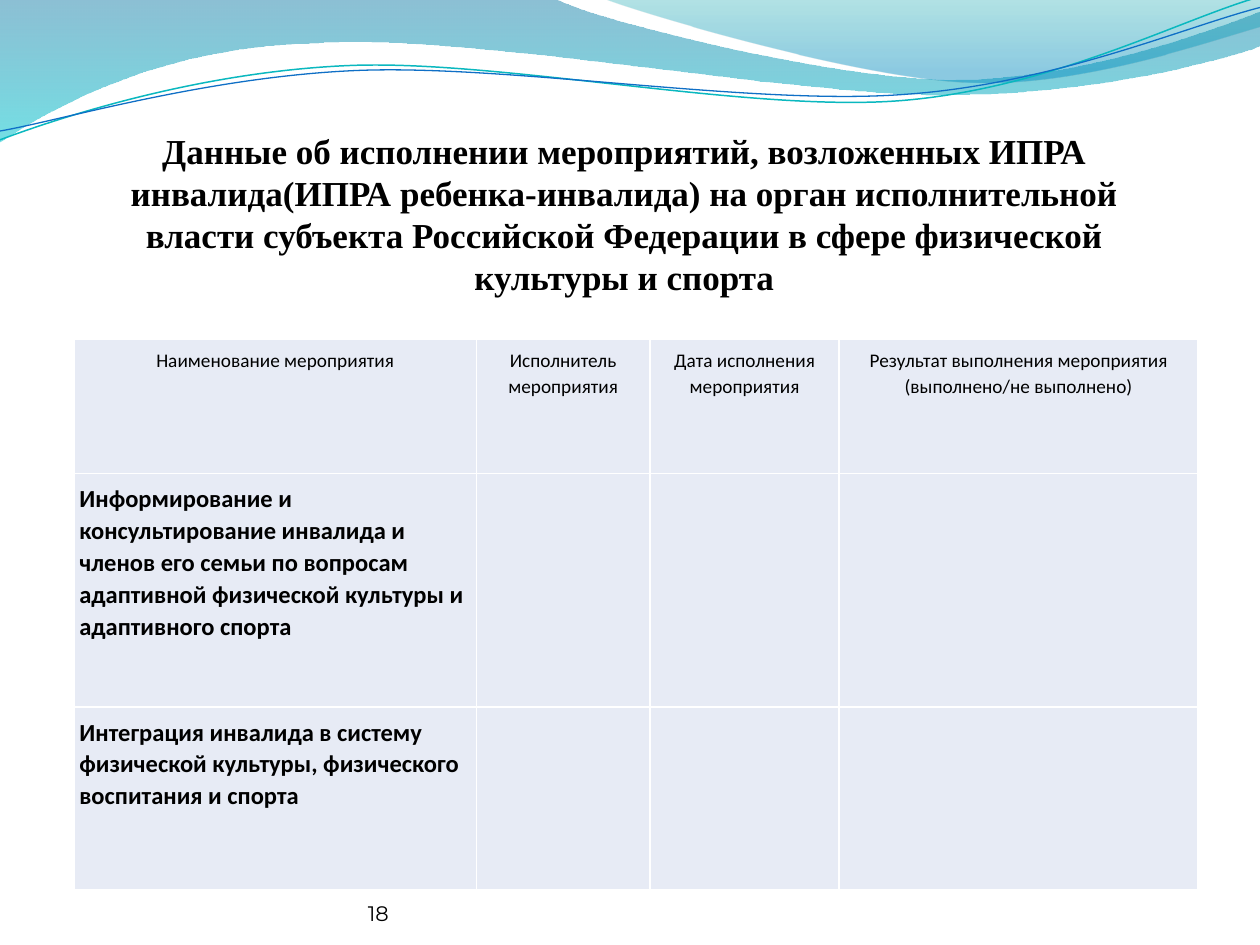
from math import cos, radians, sin

from lxml.etree import SubElement
from pptx import Presentation
from pptx.dml.color import RGBColor
from pptx.enum.text import MSO_ANCHOR as Anchor, MSO_AUTO_SIZE as AutoSize, PP_ALIGN as Align
from pptx.oxml.ns import qn
from pptx.util import Inches, Pt

COLORS = {
    "text": "000000", "cell": "E7EBF5", "border": "FFFFFF",
    "deep": "0074A1", "cyan": "00C6CF", "teal": "00A1A9", "sky": "008BBF",
    "upper line": "0AB8BF", "lower line": "0F6FC6",
}


def write(frame, text, font="Calibri", size=11, bold=False, align=Align.LEFT,
          spacing=1.0, anchor=Anchor.TOP):
    frame.word_wrap = True
    frame.vertical_anchor = anchor
    paragraph = frame.paragraphs[0]
    paragraph.alignment = align
    paragraph.line_spacing = spacing
    run = paragraph.add_run()
    run.text = text
    run.font.name = font
    run.font.size = Pt(size)
    run.font.bold = bold
    run.font.color.rgb = RGBColor.from_string(COLORS["text"])


def draw_curve(start, segments, close=False, tilt=0, center=(0, 0)):
    points = [start]
    for segment in segments:
        points += zip(segment[::2], segment[1::2])
    c, s = cos(radians(tilt)), sin(radians(tilt))
    offsets = [(x - center[0], y - center[1]) for x, y in points]
    placed = [(Inches(center[0] + x * c + y * s), Inches(center[1] - x * s + y * c))
              for x, y in offsets]
    builder = slide.shapes.build_freeform(*placed[0])
    builder.add_line_segments(placed[1:], close=close)
    curve = builder.convert_to_shape()
    curve.rotation = tilt
    curve.shadow.inherit = False
    corners = iter(list(curve._element.spPr.iter(qn("a:lnTo"))))
    for segment in segments:
        corner = next(corners)
        if len(segment) == 6:
            corner.addprevious(bezier := corner.makeelement(qn("a:cubicBezTo")))
            for handle in (corner, next(corners), next(corners)):
                bezier.append(handle[0])
                handle.getparent().remove(handle)
    return curve


prs = Presentation()
prs.slide_width, prs.slide_height = Inches(10), Inches(7.5)
slide = prs.slides.add_slide(prs.slide_layouts[5])

waves = [
    ((0, 0),
     [(4.4, -0.01), (4.76, 0.17, 6.64, 0.63, 7.58, 0.63), (8.53, 0.63, 9.58, 0.26, 10, 0.09),
      (10.01, 0.36), (9.83, 0.44, 8.7, 0.76, 7.46, 0.75), (6.22, 0.75, 3.82, 0.28, 2.57, 0.34),
      (1.29, 0.36, 0.46, 0.83, -0.01, 1.13), (0, 0)],
     [(0, "deep", 45), (1, "cyan", 55)]),
    ((4.79, -0.01),
     [(5.09, 0.11, 6.82, 0.62, 7.69, 0.65), (8.56, 0.69, 9.61, 0.32, 10, 0.21), (10, 0),
      (4.79, -0.01)],
     [(0, "teal", 30), (0.8, "sky", 45)]),
]
for start, segments, stops in waves:
    wave = draw_curve(start, segments, close=True)
    wave.line.fill.background()
    wave.fill.gradient()
    wave.fill.gradient_angle = 270
    for stop, (position, color, _) in zip(wave.fill.gradient_stops, stops):
        stop.position = position
        stop.color.rgb = RGBColor.from_string(COLORS[color])
    tints = wave._element.spPr.find(qn("a:gradFill")).iter(qn("a:srgbClr"))
    for tint, (_, _, opacity) in zip(tints, stops):
        SubElement(tint, qn("a:alpha")).set("val", str(opacity * 1000))

wave_lines = [
    ((0, 1.11),
     [(0.48, 0.93, 1.58, 0.57, 2.77, 0.52), (3.95, 0.47, 5.93, 0.89, 7.13, 0.8),
      (8.33, 0.71, 9.38, 0.15, 9.98, -0.02)], (4.99, 0.57), "upper line", 0.85),
    ((0, 1.04),
     [(0.47, 0.96, 1.64, 0.61, 2.83, 0.56), (4.03, 0.51, 5.97, 0.84, 7.17, 0.75),
      (8.36, 0.67, 9.41, 0.21, 10, 0.06)], (5, 0.59), "lower line", 0.75),
]
for start, segments, center, color, width in wave_lines:
    wave_line = draw_curve(start, segments, tilt=-2.7, center=center)
    wave_line.fill.background()
    wave_line.line.color.rgb = RGBColor.from_string(COLORS[color])
    wave_line.line.width = Pt(width)

page_number = slide.shapes.add_textbox(Inches(2.92), Inches(6.95), Inches(3.67), Inches(0.4))
number_frame = page_number.text_frame
number_frame.margin_left = number_frame.margin_right = 0
number_frame.margin_top = number_frame.margin_bottom = 0
write(number_frame, "18", font="Montserrat", size=12, anchor=Anchor.BOTTOM)

column_widths = [3.19, 1.38, 1.5, 2.85]
row_heights = [1.07, 1.85, 1.45]
measures = [
    ["Наименование мероприятия", "Исполнитель мероприятия", "Дата исполнения мероприятия",
     "Результат выполнения мероприятия (выполнено/не выполнено)"],
    ["Информирование и консультирование инвалида и членов его семьи по вопросам "
     "адаптивной физической культуры и адаптивного спорта", "", "", ""],
    ["Интеграция инвалида в систему физической культуры, физического воспитания и спорта",
     "", "", ""],
]
measure_table = slide.shapes.add_table(
    len(row_heights), len(column_widths), Inches(0.59), Inches(2.69),
    Inches(sum(column_widths)), Inches(sum(row_heights))).table
measure_table.first_row = measure_table.horz_banding = False
for column, width in zip(measure_table.columns, column_widths):
    column.width = Inches(width)
for row, height in zip(measure_table.rows, row_heights):
    row.height = Inches(height)

for row_index, texts in enumerate(measures):
    for column_index, text in enumerate(texts):
        cell = measure_table.cell(row_index, column_index)
        cell.margin_left = cell.margin_right = Inches(0.04)
        cell.margin_top = cell.margin_bottom = Inches(0.07)
        properties = cell._tc.get_or_add_tcPr()
        for side in ("lnL", "lnR", "lnT", "lnB"):
            border = SubElement(properties, qn(f"a:{side}"), w=str(Pt(1)))
            SubElement(SubElement(border, qn("a:solidFill")), qn("a:srgbClr"),
                       val=COLORS["border"])
        cell.fill.solid()
        cell.fill.fore_color.rgb = RGBColor.from_string(COLORS["cell"])
        if text and row_index == 0:
            write(cell.text_frame, text, align=Align.CENTER, spacing=1.07)
        elif text:
            write(cell.text_frame, text, size=14, bold=True, spacing=1.07)

title = slide.shapes.title
title.left, title.top, title.width, title.height = map(Inches, (0.83, 0.98, 8.25, 1.72))
title.text_frame.auto_size = AutoSize.NONE
write(title.text_frame,
      "Данные об исполнении мероприятий, возложенных ИПРА инвалида(ИПРА ребенка-инвалида) "
      "на орган исполнительной власти субъекта Российской Федерации в сфере физической "
      "культуры и спорта",
      font="Times New Roman", size=20, bold=True, align=Align.CENTER)

prs.save("out.pptx")
